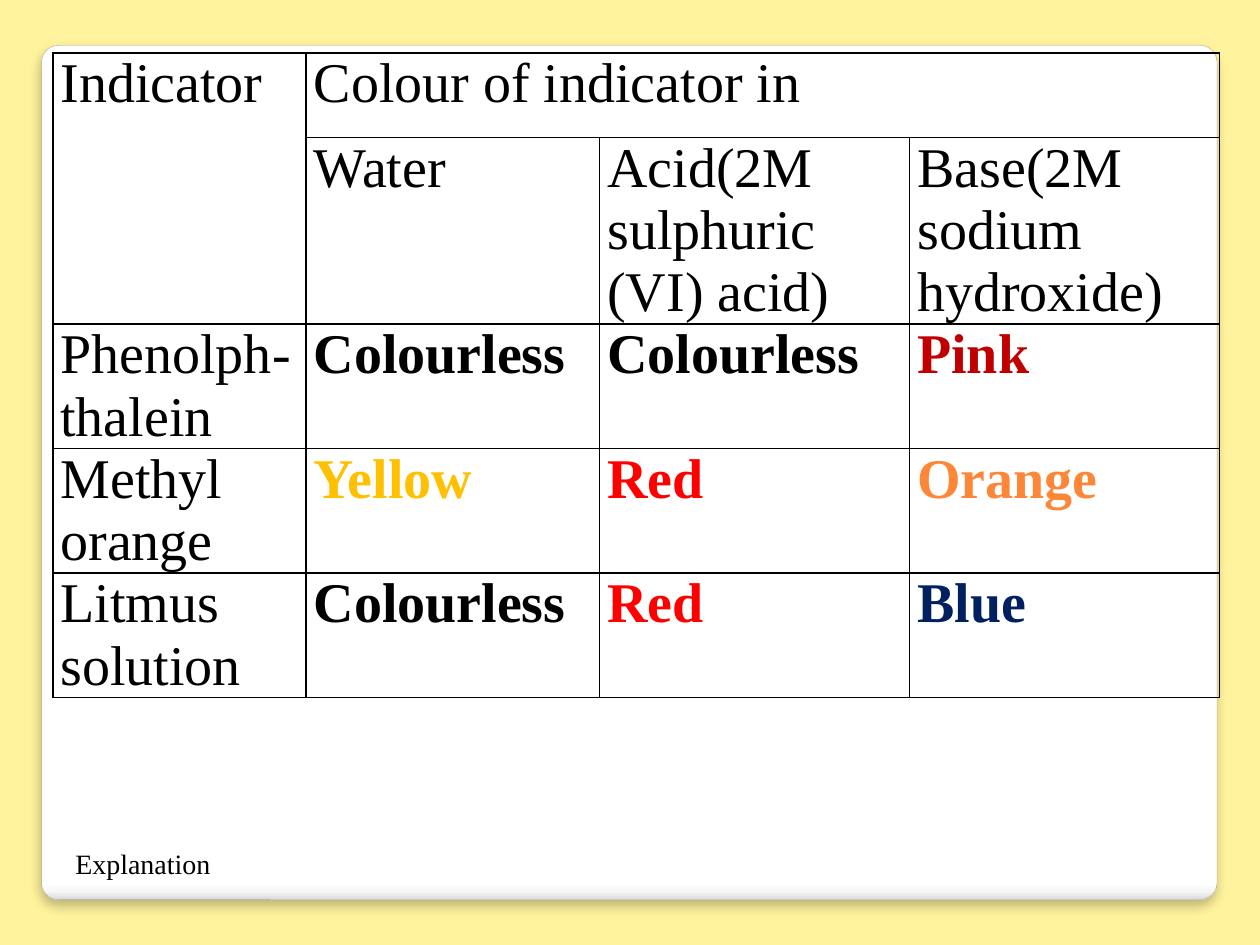
from typing import NamedTuple

from lxml.etree import SubElement
from pptx import Presentation
from pptx.dml.color import RGBColor
from pptx.enum.shapes import MSO_SHAPE as Shape
from pptx.enum.text import MSO_ANCHOR as Anchor, MSO_AUTO_SIZE as AutoSize
from pptx.oxml.ns import qn
from pptx.util import Inches, Pt

FONT = "Times New Roman"
CREAM = RGBColor(0xFF, 0xF3, 0x9D)
GREY = RGBColor(0xA4, 0xA4, 0xA4)
BLACK = RGBColor(0, 0, 0)
PINK = RGBColor(0xC0, 0, 0)
YELLOW = RGBColor(0xFF, 0xC0, 0)
RED = RGBColor(0xFF, 0, 0)
ORANGE = RGBColor(0xFE, 0x86, 0x37)
BLUE = RGBColor(0, 0x20, 0x60)

PANEL_STOPS = [(0, "FFFFFF"), (98, "FFFFFF"), (99, "F7F7F7"), (100, "DADADA")]
COLUMN_WIDTHS = [2.01, 2.33, 2.46, 2.46]
ROW_HEIGHTS = [0.67, 1.33, 0.66, 0.66, 0.66]


class Entry(NamedTuple):
    text: str
    color: RGBColor = BLACK
    bold: bool = False


def result(text: str, color: RGBColor = BLACK) -> Entry:
    return Entry(text, color, bold=True)


COLOURLESS = result("Colourless")
ENTRIES = [
    [Entry("Indicator"), Entry("Colour of indicator in"), None, None],
    [None, Entry("Water"), Entry("Acid(2M sulphuric (VI) acid)"),
     Entry("Base(2M sodium hydroxide)")],
    [Entry("Phenolph-\nthalein"), COLOURLESS, COLOURLESS, result("Pink", PINK)],
    [Entry("Methyl orange"), result("Yellow", YELLOW), result("Red", RED),
     result("Orange", ORANGE)],
    [Entry("Litmus solution"), COLOURLESS, result("Red", RED), result("Blue", BLUE)],
]


def write(frame, text: str, *, size: float, color: RGBColor = BLACK,
          bold: bool = False) -> None:
    """Put each line of the text in its own paragraph."""
    for index, line in enumerate(text.split("\n")):
        paragraph = frame.add_paragraph() if index else frame.paragraphs[0]
        run = paragraph.add_run()
        run.text = line
        run.font.name = FONT
        run.font.size = Pt(size)
        run.font.bold = bold
        run.font.color.rgb = color


def add_color(parent, value: str):
    return SubElement(parent, qn("a:srgbClr"), val=value)


def add_panel(slide) -> None:
    panel = slide.shapes.add_shape(
        Shape.ROUNDED_RECTANGLE, Inches(0.33), Inches(0.36), Inches(9.33), Inches(6.78))
    panel.adjustments[0] = 0.02
    panel.line.color.rgb = GREY
    panel.line.width = Pt(0.16)

    panel.fill.gradient()
    panel.fill.gradient_angle = 270
    stops = panel.element.spPr.find(".//" + qn("a:gsLst"))
    for stop in list(stops):
        stops.remove(stop)
    for percent, value in PANEL_STOPS:
        add_color(SubElement(stops, qn("a:gs"), pos=str(percent * 1000)), value)

    panel.shadow.inherit = False
    effects = panel.element.spPr.find(qn("a:effectLst"))
    shadow = SubElement(effects, qn("a:outerShdw"), blurRad=str(Pt(6)),
                        dist=str(Pt(4)), dir="5400000", algn="t", rotWithShape="0")
    SubElement(add_color(shadow, "000000"), qn("a:alpha"), val="25000")


def format_cell(cell) -> None:
    """Set narrow margins, black borders and no fill."""
    cell.margin_left = cell.margin_right = Inches(0.06)
    cell.margin_top = cell.margin_bottom = 0
    properties = cell._tc.get_or_add_tcPr()
    for side in ("lnL", "lnR", "lnT", "lnB"):
        border = SubElement(properties, qn(f"a:{side}"), w=str(Pt(1)))
        add_color(SubElement(border, qn("a:solidFill")), "000000")
    cell.fill.background()


def add_indicator_table(slide) -> None:
    graphic = slide.shapes.add_table(
        len(ROW_HEIGHTS), len(COLUMN_WIDTHS),
        Inches(0.42), Inches(0.42), Inches(9.25), Inches(5.47))
    table = graphic.table
    table.first_row = table.horz_banding = False
    for column, width in zip(table.columns, COLUMN_WIDTHS):
        column.width = Inches(width)
    for row, height in zip(table.rows, ROW_HEIGHTS):
        row.height = Inches(height)

    table.cell(0, 0).merge(table.cell(1, 0))
    table.cell(0, 1).merge(table.cell(0, 3))
    for row, entries in zip(table.rows, ENTRIES):
        for cell, entry in zip(row.cells, entries):
            format_cell(cell)
            if entry:
                write(cell.text_frame, entry.text, size=32,
                      color=entry.color, bold=entry.bold)


def add_explanation(slide) -> None:
    box = slide.shapes.add_textbox(Inches(0.5), Inches(6.67), Inches(1.29), Inches(0.37))
    frame = box.text_frame
    frame.word_wrap = False
    frame.auto_size = AutoSize.SHAPE_TO_FIT_TEXT
    frame.vertical_anchor = Anchor.MIDDLE
    write(frame, "Explanation", size=16)


def main() -> None:
    deck = Presentation()
    deck.slide_width, deck.slide_height = Inches(10), Inches(7.5)
    slide = deck.slides.add_slide(deck.slide_layouts[6])
    slide.background.fill.solid()
    slide.background.fill.fore_color.rgb = CREAM
    add_panel(slide)
    add_indicator_table(slide)
    add_explanation(slide)
    deck.save("out.pptx")


if __name__ == "__main__":
    main()
